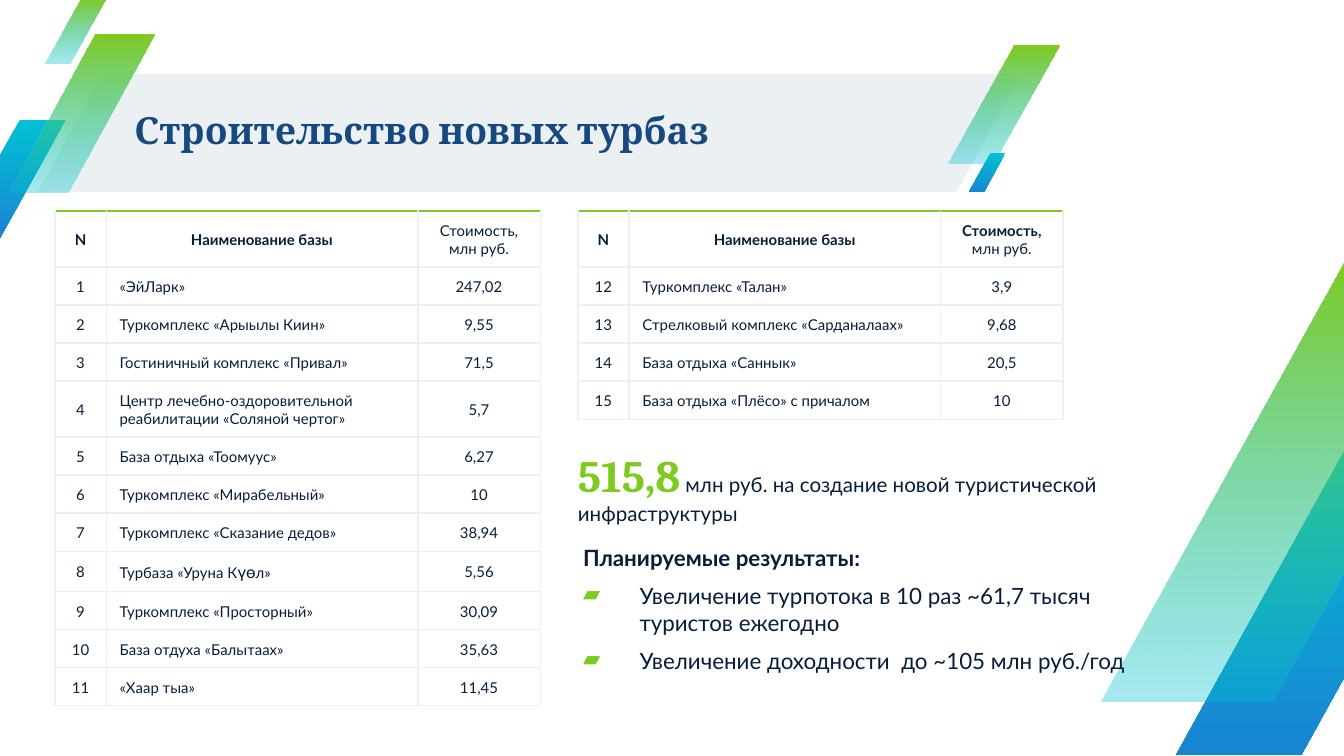
from dataclasses import dataclass

from lxml.etree import SubElement
from pptx import Presentation
from pptx.dml.color import RGBColor
from pptx.enum.shapes import MSO_SHAPE
from pptx.enum.text import MSO_ANCHOR, PP_ALIGN
from pptx.oxml.ns import qn
from pptx.util import Inches, Pt


@dataclass(frozen=True)
class Theme:
    panel: str = "EBF0F3"
    green: str = "7FCA20"
    teal: str = "02C1D3"
    blue: str = "1985D2"
    title: str = "184880"
    ink: str = "061E3A"
    grey: str = "757C83"
    heading_font: str = "Cambria"
    body_font: str = "Lato"
    spacer_font: str = "Arial"
    title_size: int = 20
    total_size: int = 24
    body_size: int = 12
    note_size: int = 11
    spacer_size: int = 10
    letter_size: int = 9
    cell_size: int = 8


class SlideBuilder:
    def __init__(self, slide, theme):
        self.slide = slide
        self.theme = theme

    def slant(self, at, slope, color, end_color=None, end_alpha=100):
        """Add a parallelogram with a plain or a top-to-bottom gradient fill."""
        shape = self.slide.shapes.add_shape(
            MSO_SHAPE.PARALLELOGRAM, *[Inches(value) for value in at])
        shape.adjustments[0] = slope
        shape.shadow.inherit = False
        shape.line.fill.background()
        if end_color is None:
            shape.fill.solid()
            shape.fill.fore_color.rgb = RGBColor.from_string(color)
            return
        shape.fill.gradient()
        shape.fill.gradient_angle = 270
        for stop, stop_color in zip(shape.fill.gradient_stops, (color, end_color)):
            stop.color.rgb = RGBColor.from_string(stop_color)
        if end_alpha < 100:
            last_color = list(shape._element.iter(qn("a:srgbClr")))[-1]
            SubElement(last_color, qn("a:alpha"), val=str(end_alpha * 1000))

    def text_box(self, at, inset=True, anchor=MSO_ANCHOR.TOP):
        frame = self.slide.shapes.add_textbox(
            *[Inches(value) for value in at]).text_frame
        frame.word_wrap = True
        frame.vertical_anchor = anchor
        if not inset:
            frame.margin_left = frame.margin_right = 0
            frame.margin_top = frame.margin_bottom = 0
        return frame

    def span(self, para, text, size, bold=False, color=None, font=None):
        span = para.add_run()
        span.text = text
        span.font.size = Pt(size)
        span.font.bold = bold
        span.font.name = font or self.theme.body_font
        span.font.color.rgb = RGBColor.from_string(color or self.theme.ink)

    def indent(self, para, left, first=0, bullet=None):
        para.space_before = Pt(6)
        properties = para._p.get_or_add_pPr()
        properties.set("marL", str(Inches(left)))
        properties.set("indent", str(Inches(first)))
        if bullet:
            color = SubElement(properties, qn("a:buClr"))
            SubElement(color, qn("a:srgbClr"), val=self.theme.green)
            SubElement(properties, qn("a:buChar"), char=bullet)

    def borders(self, cell, is_header):
        properties = cell._tc.get_or_add_tcPr()
        for side in ("lnL", "lnR", "lnT", "lnB"):
            accent = is_header and side == "lnT"
            line = SubElement(properties, qn(f"a:{side}"),
                              w=str(Pt(1.5 if accent else 0.75)))
            fill = SubElement(line, qn("a:solidFill"))
            SubElement(fill, qn("a:srgbClr"),
                       val=self.theme.green if accent else self.theme.panel)

    def table(self, at, rows):
        """Each cell is a list of (text, bold, size) parts."""
        widths = (0.38, 2.32, 0.91)
        table = self.slide.shapes.add_table(
            len(rows), len(widths), *[Inches(value) for value in at]).table
        table.first_row = table.horz_banding = False
        for column, width in zip(table.columns, widths):
            column.width = Inches(width)
        for row_index, row in enumerate(rows):
            table.rows[row_index].height = Inches(0.24)
            for column_index, parts in enumerate(row):
                cell = table.cell(row_index, column_index)
                cell.vertical_anchor = MSO_ANCHOR.MIDDLE
                cell.margin_left = cell.margin_right = Inches(0.1)
                cell.margin_top, cell.margin_bottom = Inches(0.08), Inches(0.07)
                para = cell.text_frame.paragraphs[0]
                if row_index == 0 or column_index != 1:
                    para.alignment = PP_ALIGN.CENTER
                for text, bold, size in parts:
                    self.span(para, text, size, bold)
                self.borders(cell, row_index == 0)
                cell.fill.background()


def table_rows(theme, cost_heading, first_number, bases):
    size = theme.cell_size
    rows = [[[("N", True, size)], [("Наименование базы", True, size)], cost_heading]]
    for number, (name, cost) in enumerate(bases, first_number):
        parts = [(name, False, size)]
        if "үө" in name:
            before, after = name.split("үө")
            parts = [(before, False, size), ("үө", False, theme.letter_size),
                     (after, False, size)]
        rows.append([[(str(number), False, size)], parts, [(cost, False, size)]])
    return rows


FIRST_BASES = [
    ("«ЭйЛарк»", "247,02"),
    ("Туркомплекс «Арыылы Киин»", "9,55"),
    ("Гостиничный комплекс «Привал»", "71,5"),
    ("Центр лечебно-оздоровительной реабилитации «Соляной чертог»", "5,7"),
    ("База отдыха «Тоомуус»", "6,27"),
    ("Туркомплекс «Мирабельный»", "10"),
    ("Туркомплекс «Сказание дедов»", "38,94"),
    ("Турбаза «Уруна Күөл»", "5,56"),
    ("Туркомплекс «Просторный»", "30,09"),
    ("База отдуха «Балытаах»", "35,63"),
    ("«Хаар тыа»", "11,45"),
]
SECOND_BASES = [
    ("Туркомплекс «Талан»", "3,9"),
    ("Стрелковый комплекс «Сарданалаах»", "9,68"),
    ("База отдыха «Саннык»", "20,5"),
    ("База отдыха «Плёсо» с причалом", "10"),
]


def main():
    theme = Theme()
    deck = Presentation()
    deck.slide_width, deck.slide_height = Inches(10), Inches(10 * 9 / 16)
    builder = SlideBuilder(deck.slides.add_slide(deck.slide_layouts[6]), theme)

    # Title band and slanted decoration
    cool = (theme.teal, theme.blue)
    fresh = (theme.green, theme.teal, 34)
    builder.slant((0.28, 0.55, 7.32, 0.88), 0.55, theme.panel)
    for at, gradient in (
        ((-0.34, 0.89, 0.83, 0.88), cool),
        ((7.05, 0.34, 0.83, 0.88), fresh),
        ((0.06, 0.26, 1.09, 1.17), fresh),
        ((0.33, -0.02, 0.46, 0.49), fresh),
        ((7.21, 1.14, 0.27, 0.29), cool),
        ((8.75, 3.2, 2.27, 2.42), cool),
        ((8.19, 1.92, 3.1, 3.3), fresh),
    ):
        builder.slant(at, 0.59, *gradient)

    # Title
    frame = builder.text_box((1, 0.54, 6.59, 0.89), False, MSO_ANCHOR.MIDDLE)
    para = frame.paragraphs[0]
    para.line_spacing = 0.9
    builder.span(para, "Строительство новых турбаз", theme.title_size, True,
                 theme.title, theme.heading_font)

    # Total cost
    frame = builder.text_box((4.3, 3.46, 4.52, 0.32), False, MSO_ANCHOR.MIDDLE)
    para = frame.paragraphs[0]
    builder.span(para, "515,8", theme.total_size, True, theme.green, theme.heading_font)
    builder.span(para, " ", theme.spacer_size, False, theme.grey, theme.spacer_font)
    builder.span(para, "млн руб. на создание новой туристической инфраструктуры",
                 theme.note_size)

    # Planned results
    frame = builder.text_box((4.16, 4, 4.35, 1.11))
    para = frame.paragraphs[0]
    builder.indent(para, 0.08)
    builder.span(para, "Планируемые результаты:", theme.body_size, True)
    for result in ("Увеличение турпотока в 10 раз ~61,7 тысяч туристов ежегодно",
                   "Увеличение доходности  до ~105 млн руб./год"):
        para = frame.add_paragraph()
        builder.indent(para, 0.5, -0.42, "▰")
        builder.span(para, result, theme.body_size)

    # Tables of tourist bases
    size = theme.cell_size
    plain_cost = [("Стоимость, млн руб.", False, size)]
    mixed_cost = [("Стоимость, ", True, size), ("млн руб.", False, size)]
    builder.table((0.41, 1.57, 3.61, 3.68),
                  table_rows(theme, plain_cost, 1, FIRST_BASES))
    builder.table((4.3, 1.57, 3.61, 1.55),
                  table_rows(theme, mixed_cost, len(FIRST_BASES) + 1, SECOND_BASES))

    deck.save("out.pptx")


if __name__ == "__main__":
    main()
